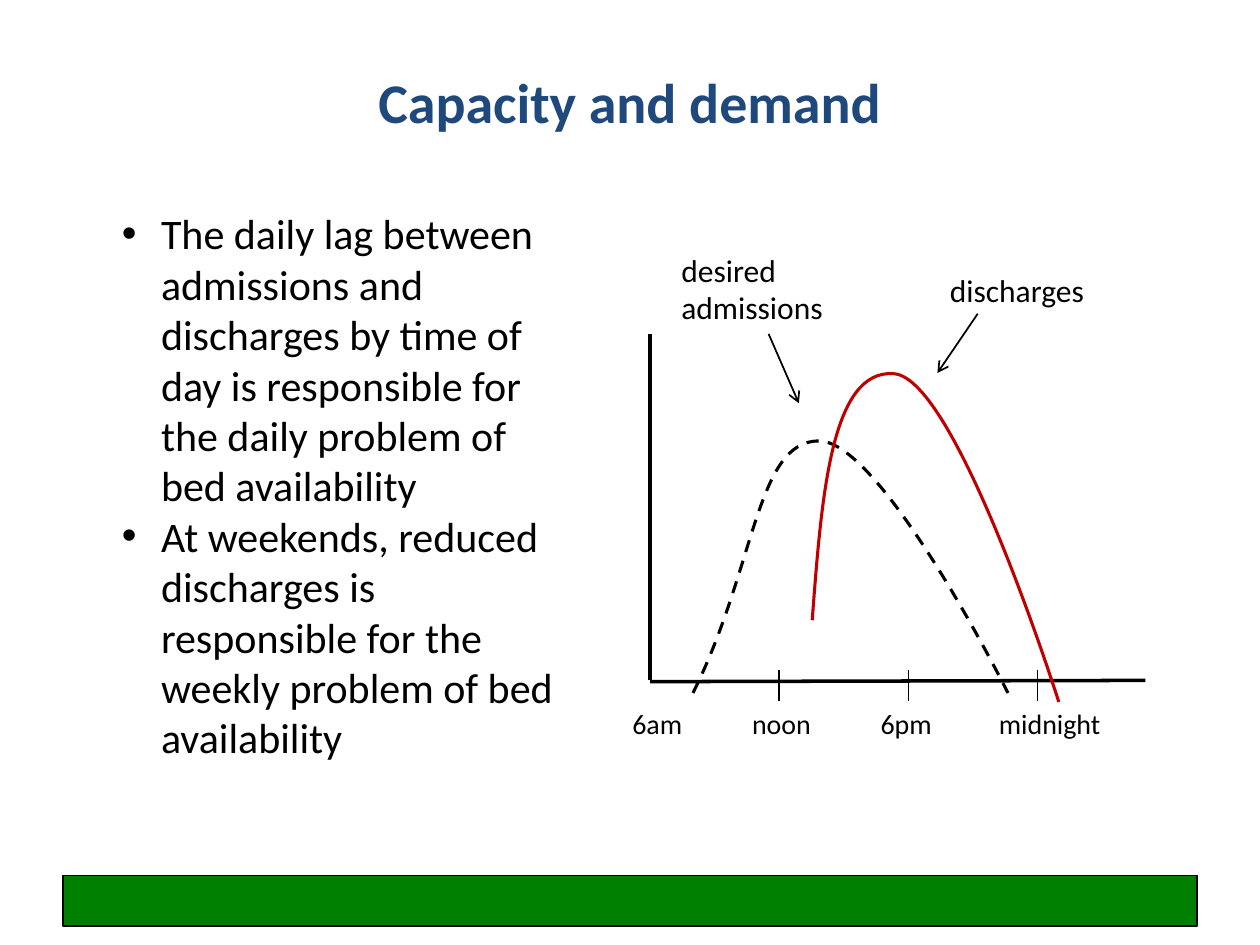
from lxml import etree
from pptx import Presentation
from pptx.dml.color import RGBColor
from pptx.enum.dml import MSO_LINE
from pptx.enum.shapes import MSO_CONNECTOR, MSO_SHAPE
from pptx.enum.text import MSO_ANCHOR, PP_ALIGN
from pptx.oxml.ns import qn
from pptx.util import Inches, Pt

STRAIGHT = MSO_CONNECTOR.STRAIGHT
RECT = MSO_SHAPE.RECTANGLE
DASH = MSO_LINE.DASH
MIDDLE = MSO_ANCHOR.MIDDLE
CENTER = PP_ALIGN.CENTER
FONT = "Calibri"
COLORS = {"ink": "000000", "title": "1F497D", "bar": "008000", "discharges": "C00000"}
RGB = {name: RGBColor.from_string(value) for name, value in COLORS.items()}

prs = Presentation()
prs.slide_width, prs.slide_height = Inches(10), Inches(7.5)
s = prs.slides.add_slide(prs.slide_layouts[6])
CELL = prs.slide_width // 20


def add_text(box, paragraphs, size, color="ink", bold=False):
    tb = s.shapes.add_textbox(*(int(v * CELL) for v in box))
    tf = tb.text_frame
    tf.word_wrap = True
    for i, text in enumerate(paragraphs):
        p = tf.paragraphs[0] if i == 0 else tf.add_paragraph()
        r = p.add_run()
        r.text = text
        r.font.name, r.font.size, r.font.bold = FONT, Pt(size), bold
        r.font.color.rgb = RGB[color]
    return tf


def add_line(x1, y1, x2, y2, width, arrow=False):
    c = s.shapes.add_connector(STRAIGHT, *(int(v * CELL) for v in (x1, y1, x2, y2)))
    c.line.color.rgb = RGB["ink"]
    c.line.width = Pt(width)
    if arrow:
        etree.SubElement(c.line._get_or_add_ln(), qn("a:tailEnd"), type="arrow")
    etree.SubElement(c._element.spPr, qn("a:effectLst"))


bar = s.shapes.add_shape(RECT, CELL, int(13.9 * CELL), 18 * CELL, int(0.8 * CELL))
bar.shadow.inherit = False
bar.fill.solid()
bar.fill.fore_color.rgb = RGB["bar"]
bar.line.color.rgb = RGB["ink"]
bar.line.width = Pt(0.75)

tf = add_text((1, 0.6, 18, 2.02), ["Capacity and demand"], 32, "title", True)
tf.vertical_anchor = MIDDLE
tf.paragraphs[0].alignment = CENTER

AXIS_X, AXIS_Y, TICK_GAP = 10.32, 10.8, 2.05
add_line(AXIS_X, 5.3, AXIS_X, AXIS_Y, 2)
add_line(18.18, AXIS_Y, AXIS_X, AXIS_Y + 0.02, 2)
for i in range(1, 4):
    x = AXIS_X + i * TICK_GAP
    add_line(x, 10.64, x, 11.12, 1)

for text, x, w in [("6am", 9.84, 1.58), ("noon", 11.74, 1.58),
                   ("6pm", 13.78, 1.58), ("midnight", 15.66, 2.36)]:
    add_text((x, 11.12, w, 0.74), [text], 16)

curves = [
    ("ink", DASH, 0, [(11.26, 10.62), (11.72, 8.58), (12.2, 6.56), (13, 6.58),
                      (13.8, 6.6), (16.06, 10.78), (16.06, 10.78)]),
    ("discharges", None, 4.3, [(12.7, 10.42), (13.08, 8), (13.46, 5.59), (14.14, 5.62),
                               (14.78, 5.66), (16.62, 10.6), (16.62, 10.6)]),
]
for color, dash, angle, points in curves:
    fb = s.shapes.build_freeform(*points[0], scale=CELL)
    fb.add_line_segments(points[1:], close=False)
    sp = fb.convert_to_shape()
    sp.shadow.inherit = False
    sp.fill.background()
    sp.line.color.rgb = RGB[color]
    sp.line.width = Pt(1.75)
    sp.line.dash_style = dash
    sp.rotation = angle
    outline = sp._element.spPr.find(".//" + qn("a:path"))
    segments = outline.findall(qn("a:lnTo"))
    for k in range(0, len(segments), 3):
        bezier = etree.SubElement(outline, qn("a:cubicBezTo"))
        for segment in segments[k:k + 3]:
            bezier.append(segment[0])
            outline.remove(segment)

add_line(12.2, 5.3, 12.68, 6.4, 1, arrow=True)
add_line(15.52, 4.98, 14.88, 5.92, 1, arrow=True)
add_text((10.62, 3.88, 3, 1.42), ["desired", "admissions"], 18)
add_text((14.88, 4.2, 3, 0.8), ["discharges"], 18)

tf = add_text((1.74, 3.2, 7.4, 9.7), [
    "The daily lag between admissions and discharges by time of day is responsible "
    "for the daily problem of bed availability",
    "At weekends, reduced discharges is responsible for the weekly problem of bed availability",
], 24)
for p in tf.paragraphs:
    pPr = p._p.get_or_add_pPr()
    indent = int(0.62 * CELL)
    pPr.set("marL", str(indent))
    pPr.set("indent", str(-indent))
    etree.SubElement(pPr, qn("a:buFont"), typeface="Arial")
    etree.SubElement(pPr, qn("a:buChar"), char="•")

prs.save("out.pptx")
